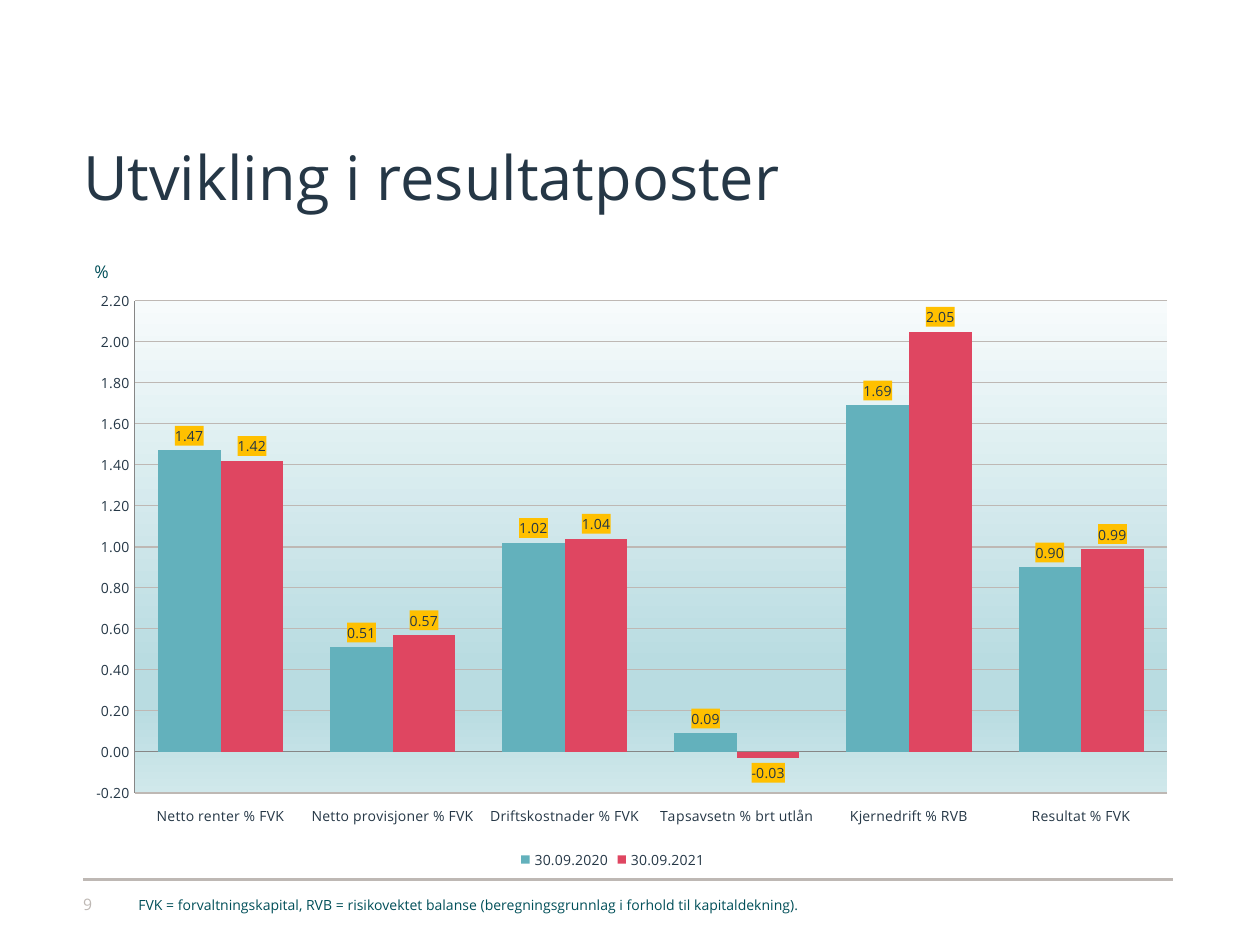
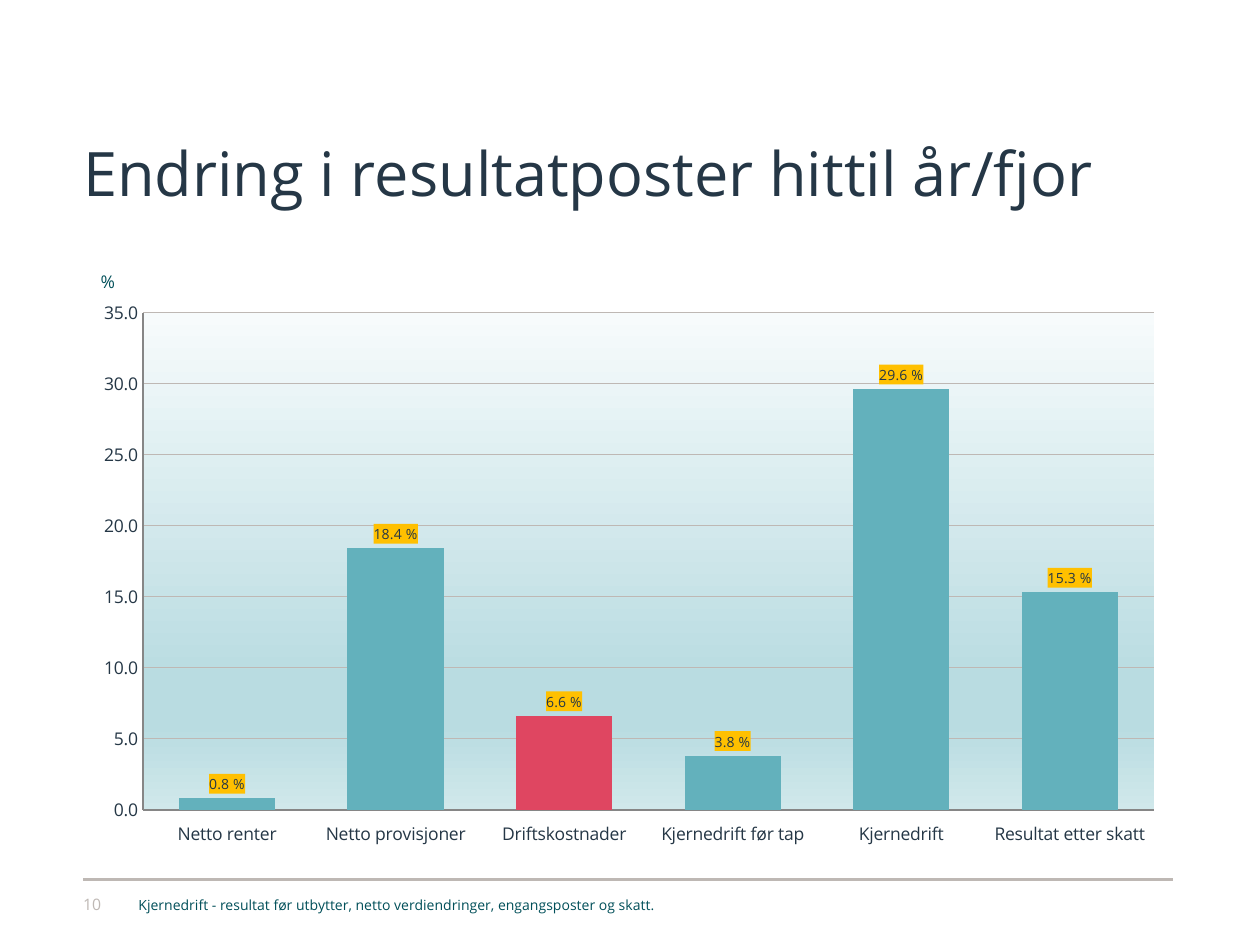
from lxml import etree
from pptx import Presentation
from pptx.chart.data import CategoryChartData
from pptx.dml.color import RGBColor
from pptx.enum.chart import XL_CHART_TYPE as ChartType, XL_LABEL_POSITION as LabelPosition
from pptx.enum.chart import XL_LEGEND_POSITION as LegendPosition
from pptx.enum.chart import XL_TICK_LABEL_POSITION as TickLabelPosition, XL_TICK_MARK as TickMark
from pptx.enum.shapes import MSO_CONNECTOR as Connector
from pptx.enum.text import MSO_ANCHOR as Anchor
from pptx.oxml import parse_xml
from pptx.oxml.ns import nsdecls, qn
from pptx.util import Inches, Pt

FONT = "Open Sans"
COLORS = {
    "title": "253746", "note": "004F59", "rule": "BEB8B4", "axis": "868686",
    "teal": "63B1BC", "red": "DF4661", "label": "FFC000",
}
PLOT_GRADIENT = [(0, "F7FBFC"), (74, "B9DCE1"), (83, "B9DCE1"), (100, "D0E8EB")]
LEFT, CONTENT_WIDTH = 0.66, 8.64
BOX_INSETS = (0.1, 0.05)
NO_INSETS = (0, 0)


def rgb(name):
    return RGBColor.from_string(COLORS[name])


def add_text(slide, text, at, size, color, insets=BOX_INSETS, anchor=Anchor.TOP, wrap=False):
    box = slide.shapes.add_textbox(*map(Inches, at))
    frame = box.text_frame
    frame.word_wrap = wrap
    frame.vertical_anchor = anchor
    frame.margin_left = frame.margin_right = Inches(insets[0])
    frame.margin_top = frame.margin_bottom = Inches(insets[1])
    para = frame.paragraphs[0]
    para.text = text
    para.font.name = FONT
    para.font.size = Pt(size)
    para.font.color.rgb = rgb(color)


def add_frame(deck, title, title_top, number, note):
    """Add a slide with its title, footer rule, page number and footnote."""
    slide = deck.slides.add_slide(deck.slide_layouts[6])
    rule = slide.shapes.add_connector(
        Connector.STRAIGHT, Inches(LEFT), Inches(6.98), Inches(9.31), Inches(6.98))
    rule.line.color.rgb = rgb("rule")
    rule.line.width = Pt(1.42)
    etree.SubElement(rule._element.spPr, qn("a:effectLst"))
    add_text(slide, title, (LEFT, title_top, CONTENT_WIDTH, 0.74), 35, "title",
             NO_INSETS, Anchor.BOTTOM, wrap=True)
    add_text(slide, str(number), (LEFT, 7.1, 0.27, 0.21), 9, "rule", NO_INSETS)
    add_text(slide, note, (1, 7.07, 5.89, 0.24), 8, "note")
    return slide


def style_plot_area(chart, layout):
    """Place the inner plot area by fractions of the chart and fill it with the gradient."""
    area = chart._chartSpace.chart.plotArea
    for old in area.findall(qn("c:layout")):
        area.remove(old)
    places = "".join(f'<c:{key} val="{value}"/>' for key, value in zip("xywh", layout))
    area.insert(0, parse_xml(
        f'<c:layout {nsdecls("c")}><c:manualLayout><c:layoutTarget val="inner"/>'
        f'<c:xMode val="edge"/><c:yMode val="edge"/>{places}</c:manualLayout></c:layout>'))
    stops = "".join(f'<a:gs pos="{position * 1000}"><a:srgbClr val="{color}"/></a:gs>'
                    for position, color in PLOT_GRADIENT)
    area.append(parse_xml(
        f'<c:spPr {nsdecls("c", "a")}><a:gradFill><a:gsLst>{stops}</a:gsLst>'
        '<a:lin ang="5400000" scaled="0"/></a:gradFill><a:ln><a:noFill/></a:ln></c:spPr>'))


def style_axes(chart, scale, number_format, size):
    for axis in (chart.category_axis, chart.value_axis):
        axis.major_tick_mark = axis.minor_tick_mark = TickMark.NONE
        axis.tick_labels.font.size = Pt(size)
        axis.format.line.color.rgb = rgb("axis")
        axis.format.line.width = Pt(0.75)
    chart.category_axis.tick_label_position = TickLabelPosition.LOW
    values = chart.value_axis
    values.minimum_scale, values.maximum_scale, values.major_unit = scale
    values.tick_labels.number_format = number_format
    values.tick_labels.number_format_is_linked = False
    values.has_major_gridlines = True
    values.major_gridlines.format.line.color.rgb = rgb("rule")
    values.major_gridlines.format.line.width = Pt(0.75)


def style_series(series, color, label_format):
    series.format.fill.solid()
    series.format.fill.fore_color.rgb = rgb(color)
    series.invert_if_negative = False
    labels = series.data_labels
    labels.show_value = True
    labels.font.size = Pt(8)
    labels.number_format = label_format
    labels.number_format_is_linked = False
    labels.position = LabelPosition.OUTSIDE_END
    labels._element.find(qn("c:numFmt")).addnext(parse_xml(
        f'<c:spPr {nsdecls("c", "a")}><a:solidFill><a:srgbClr val="{COLORS["label"]}"/>'
        '</a:solidFill></c:spPr>'))


def add_column_chart(slide, at, layout, categories, series_values, scale,
                     axis_format, label_format, axis_size):
    data = CategoryChartData()
    data.categories = categories
    for name, values in series_values.items():
        data.add_series(name, values)
    chart = slide.shapes.add_chart(
        ChartType.COLUMN_CLUSTERED, *map(Inches, at), data).chart
    chart.has_title = False
    chart.has_legend = False
    chart.font.name = FONT
    chart.font.size = Pt(18)
    chart.font.color.rgb = rgb("title")
    plot = chart.plots[0]
    plot.gap_width = 75
    plot.overlap = 0
    plot.vary_by_categories = False
    style_axes(chart, scale, axis_format, axis_size)
    for series, color in zip(plot.series, ("teal", "red")):
        style_series(series, color, label_format)
    style_plot_area(chart, layout)
    return chart


def add_result_levels(deck):
    slide = add_frame(
        deck, "Utvikling i resultatposter", 0.95, 9,
        "FVK = forvaltningskapital, RVB = risikovektet balanse "
        "(beregningsgrunnlag i forhold til kapitaldekning).")
    chart = add_column_chart(
        slide, (0.43, 2.29, 8.87, 4.65), (0.072, 0.021, 0.924, 0.84),
        ["Netto renter % FVK", "Netto provisjoner % FVK", "Driftskostnader % FVK",
         "Tapsavsetn % brt utlån", "Kjernedrift % RVB", "Resultat % FVK"],
        {"30.09.2020": (1.47, 0.51, 1.02, 0.09, 1.69, 0.90),
         "30.09.2021": (1.42, 0.57, 1.04, -0.03, 2.05, 0.99)},
        (-0.2, 2.2, 0.2), "#,##0.00", "0.00", 8)
    chart.has_legend = True
    chart.legend.position = LegendPosition.BOTTOM
    chart.legend.include_in_layout = False
    chart.legend.font.size = Pt(8)
    add_text(slide, "%", (0.65, 2.02, 0.35, 0.27), 10, "note")


def add_result_changes(deck):
    slide = add_frame(
        deck, "Endring i resultatposter hittil år/fjor", 0.92, 10,
        "Kjernedrift - resultat før utbytter, netto verdiendringer, engangsposter og skatt.")
    categories = ["Netto renter", "Netto provisjoner", "Driftskostnader",
                  "Kjernedrift før tap", "Kjernedrift", "Resultat etter skatt"]
    chart = add_column_chart(
        slide, (0.51, 2.33, 8.79, 4.6), (0.071, 0.033, 0.913, 0.858), categories,
        {"Series 1": (0.8, 18.4, 6.6, 3.8, 29.6, 15.3)},
        (0, 35, 5), "#,##0.0", '0.0" %"', 10)
    costs = chart.plots[0].series[0].points[categories.index("Driftskostnader")]
    costs.format.fill.solid()
    costs.format.fill.fore_color.rgb = rgb("red")
    add_text(slide, "%", (0.7, 2.1, 0.29, 0.27), 10, "note")


def main():
    deck = Presentation()
    deck.slide_width, deck.slide_height = Inches(10), Inches(7.5)
    add_result_levels(deck)
    add_result_changes(deck)
    deck.save("out.pptx")


if __name__ == "__main__":
    main()
